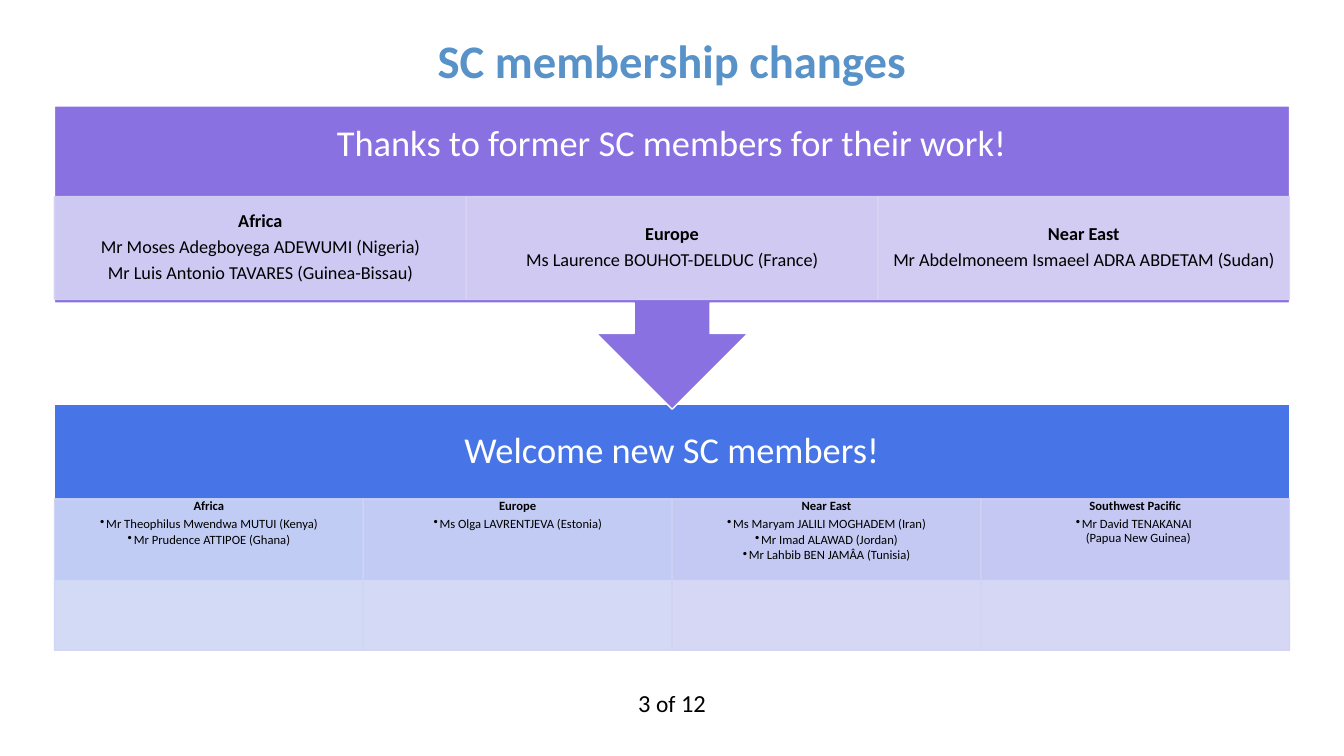
import pptx
import pptx.util
import pptx.dml.color
import pptx.enum.shapes
import pptx.enum.text
import pptx.oxml.ns
from dataclasses import dataclass
from lxml import etree

Pt = pptx.util.Pt
Inches = pptx.util.Inches
RGB = pptx.dml.color.RGBColor.from_string
Shape = pptx.enum.shapes.MSO_SHAPE
Anchor = pptx.enum.text.MSO_ANCHOR
Align = pptx.enum.text.PP_ALIGN
Fit = pptx.enum.text.MSO_AUTO_SIZE
qn = pptx.oxml.ns.qn


@dataclass(frozen=True)
class Theme:
    font: str = "Calibri"
    title: str = "5792C9"
    white: str = "FFFFFF"
    black: str = "000000"
    violet: str = "8971E1"
    blue: str = "4775E7"
    former: tuple = ("D5D3F4", "D8D4F4", "DAD5F4")
    fresh: tuple = ("CFD6F6", "D0D5F5", "D1D3F5", "D2D2F5")
    head_pt: float = 33.3
    band_pt: float = 26
    list_pt: float = 13
    note_pt: float = 9
    page_pt: float = 17.5
    of_pt: float = 16.7


THEME = Theme()
WIDE, HIGH = 13.33, 7.5
LEFT, SPAN = 0.54, 12.25
COLS, ROWS = 12, 150

FORMER = [
    ("Africa", "Mr Moses Adegboyega ADEWUMI (Nigeria)",
     "Mr Luis Antonio TAVARES (Guinea-Bissau)"),
    ("Europe", "Ms Laurence BOUHOT-DELDUC (France)"),
    ("Near East", "Mr Abdelmoneem Ismaeel ADRA ABDETAM (Sudan)"),
]
FRESH = [
    ("Africa", "Mr Theophilus Mwendwa MUTUI (Kenya)",
     "Mr Prudence ATTIPOE (Ghana)"),
    ("Europe", "Ms Olga LAVRENTJEVA (Estonia)"),
    ("Near East", "Ms Maryam JALILI MOGHADEM (Iran)",
     "Mr Imad ALAWAD (Jordan)", "Mr Lahbib BEN JAMÂA (Tunisia)"),
    ("Southwest Pacific", "Mr David TENAKANAI \v(Papua New Guinea)"),
]


def place(col, row, cols, rows):
    """Turn grid columns and rows into left, top, width and height."""
    wide, high = SPAN / COLS, HIGH / ROWS
    return [Inches(n) for n in
            (LEFT + col * wide, row * high, cols * wide, rows * high)]


def style(run, size, color, bold=False):
    run.font.name = THEME.font
    run.font.size = Pt(size)
    run.font.bold = bold
    run.font.color.rgb = RGB(color)


def write(para, text, size, color=THEME.black, bold=False, after=0.35,
          bullet=False, lines=0.9):
    """Fill one centred paragraph; after is a share of the type size."""
    para.text = text
    para.alignment = Align.CENTER
    if bullet:
        para.level = 1
        props = para._p.get_or_add_pPr()
        props.set("marL", str(Inches(0.06)))
        props.set("indent", str(-Inches(0.06)))
        etree.SubElement(props, qn("a:buChar")).set("char", "•")
    para.line_spacing = lines
    para.space_after = Pt(size * after)
    for run in para.runs:
        style(run, size, color, bold)


def frame(shape, side, edge, anchor=Anchor.TOP, wrap=True):
    body = shape.text_frame
    body.word_wrap = wrap
    body.vertical_anchor = anchor
    body.margin_left = body.margin_right = Inches(side)
    body.margin_top = body.margin_bottom = Inches(edge)
    return body


def block(slide, kind, area, fill, line, alpha=None):
    shape = slide.shapes.add_shape(kind, *area)
    shape.shadow.inherit = False
    shape.fill.solid()
    shape.fill.fore_color.rgb = RGB(fill)
    shape.line.color.rgb = RGB(line)
    shape.line.width = Pt(1)
    if alpha:
        for color in shape.element.spPr.iter(qn("a:srgbClr")):
            etree.SubElement(color, qn("a:alpha")).set("val", str(alpha * 1000))
    return shape


def label(slide, text, area, anchor):
    box = slide.shapes.add_textbox(*area)
    body = frame(box, 0.2, 0.2, anchor)
    write(body.paragraphs[0], text, THEME.band_pt, color=THEME.white)


def cells(slide, groups, fills, row, rows, size, inset, anchor, bullet):
    """Draw one row of equal cells: a region name above its members."""
    step = COLS / len(groups)
    for num, (group, fill) in enumerate(zip(groups, fills)):
        area = place(num * step, row, step, rows)
        cell = block(slide, Shape.RECTANGLE, area, fill, fill, alpha=90)
        body = frame(cell, *inset, anchor)
        region, *names = group
        write(body.paragraphs[0], region, size, bold=True)
        for name in names:
            write(body.add_paragraph(), name, size, bullet=bullet,
                  after=0.15 if bullet else 0.35)


def heading(slide, text):
    title = slide.shapes.title
    title.left = title.top = 0
    title.width, title.height = Inches(WIDE), Inches(HIGH / 6)
    body = frame(title, 0.1, 0.05, Anchor.MIDDLE)
    body.auto_size = Fit.NONE
    write(body.paragraphs[0], text, THEME.head_pt, color=THEME.title,
          bold=True, after=0)


def footer(slide):
    box = slide.shapes.add_textbox(*place(5.42, 135, 1.16, 9.2))
    body = frame(box, 0.17, 0.08, wrap=False)
    body.auto_size = Fit.SHAPE_TO_FIT_TEXT
    para = body.paragraphs[0]
    write(para, "3 ", THEME.page_pt, after=0, lines=1.0)
    for text, size in (("of", THEME.of_pt), (" 12", THEME.page_pt)):
        run = para.add_run()
        run.text = text
        style(run, size, THEME.black)


def main():
    deck = pptx.Presentation()
    deck.slide_width, deck.slide_height = Inches(WIDE), Inches(HIGH)
    slide = deck.slides.add_slide(deck.slide_layouts[5])
    heading(slide, "SC membership changes")

    # New members
    block(slide, Shape.RECTANGLE, place(0, 80.2, COLS, 35),
          THEME.blue, THEME.white)
    label(slide, "Welcome new SC members!", place(0, 80.2, COLS, 18.8),
          Anchor.MIDDLE)
    cells(slide, FRESH, THEME.fresh, 99, 30, THEME.note_pt, (0.07, 0.01),
          Anchor.TOP, bullet=True)

    # Former members, with the arrow pointing down
    arrow = block(slide, Shape.UP_ARROW_CALLOUT, place(0, 21, COLS, 60.2),
                  THEME.violet, THEME.white)
    arrow.rotation = 180
    label(slide, "Thanks to former SC members for their work!",
          place(0, 21, COLS, 21.2), Anchor.TOP)
    cells(slide, FORMER, THEME.former, 39, 20.4, THEME.list_pt, (0.1, 0.02),
          Anchor.MIDDLE, bullet=False)

    # Page number
    footer(slide)
    deck.save("out.pptx")


if __name__ == "__main__":
    main()
